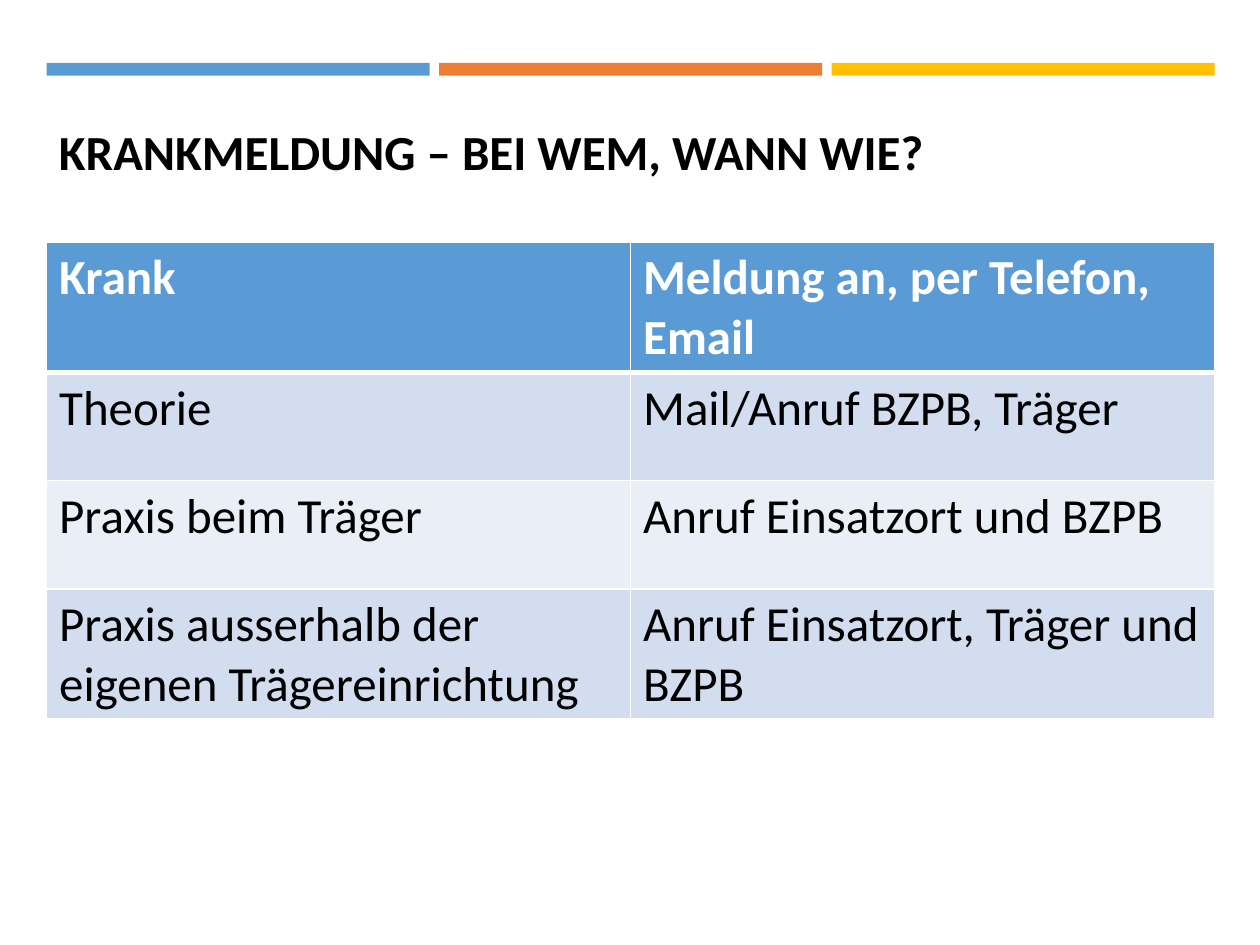
from lxml.etree import SubElement
from pptx import Presentation
from pptx.dml.color import RGBColor
from pptx.enum.shapes import MSO_SHAPE
from pptx.enum.text import MSO_ANCHOR
from pptx.oxml.ns import qn
from pptx.util import Inches, Pt

LEFT, WIDTH = 0.37, 9.27
BAR_WIDTH = 3.04
BAR_COLORS = ["5B9BD5", "ED7D31", "FFC000"]
HEADER_FILL = "5B9BD5"
BAND_FILLS = ["D2DEEF", "EAEFF7"]
ROW_HEIGHTS = [1.02, 0.86, 0.86, 0.86]
REPORTING_RULES = [
    ("Krank", "Meldung an, per Telefon, Email"),
    ("Theorie", "Mail/Anruf BZPB, Träger"),
    ("Praxis beim Träger", "Anruf Einsatzort und BZPB"),
    ("Praxis ausserhalb der eigenen Trägereinrichtung",
     "Anruf Einsatzort, Träger und BZPB"),
]


def paint(color_format, color):
    """Apply a hex colour to a fill or font colour."""
    color_format.rgb = RGBColor.from_string(color)


def write(text_frame, text, color, bold):
    """Add one styled run to the first paragraph."""
    run = text_frame.paragraphs[0].add_run()
    run.text = text
    run.font.name = "Calibri"
    run.font.size = Pt(28)
    run.font.bold = bold
    paint(run.font.color, color)


def add_bar(slide, left, color):
    """Draw one coloured bar of the header strip."""
    bar = slide.shapes.add_shape(
        MSO_SHAPE.RECTANGLE, Inches(left), Inches(0.5),
        Inches(BAR_WIDTH), Inches(0.1))
    bar.shadow.inherit = False
    bar.fill.solid()
    paint(bar.fill.fore_color, color)
    bar.line.fill.background()


def add_title(slide, text):
    """Place the slide heading."""
    heading = slide.shapes.add_textbox(
        Inches(LEFT), Inches(0.77), Inches(WIDTH), Inches(0.86))
    heading.text_frame.word_wrap = True
    heading.text_frame.vertical_anchor = MSO_ANCHOR.MIDDLE
    write(heading.text_frame, text, "000000", True)


def add_borders(cell, bottom_width):
    """Give a cell white borders with a chosen bottom width."""
    properties = cell._tc.get_or_add_tcPr()
    widths = {"a:lnL": 1, "a:lnR": 1, "a:lnT": 1, "a:lnB": bottom_width}
    for side, width in widths.items():
        border = SubElement(properties, qn(side), w=str(Pt(width)))
        fill = SubElement(border, qn("a:solidFill"))
        SubElement(fill, qn("a:srgbClr"), val="FFFFFF")


def fill_cell(cell, text, row):
    """Style and write a cell according to its row."""
    is_header = row == 0
    add_borders(cell, 3 if is_header else 1)
    cell.fill.solid()
    paint(cell.fill.fore_color,
          HEADER_FILL if is_header else BAND_FILLS[(row - 1) % 2])
    write(cell.text_frame, text, "FFFFFF" if is_header else "000000", is_header)


def add_rules_table(slide):
    """Build the table of reporting rules."""
    table = slide.shapes.add_table(
        len(REPORTING_RULES), 2, Inches(LEFT), Inches(1.92),
        Inches(WIDTH), Inches(sum(ROW_HEIGHTS))).table
    for row, (texts, height) in enumerate(zip(REPORTING_RULES, ROW_HEIGHTS)):
        table.rows[row].height = Inches(height)
        for column, text in enumerate(texts):
            fill_cell(table.cell(row, column), text, row)


def main():
    """Build and save the slide."""
    presentation = Presentation()
    presentation.slide_width = Inches(10)
    presentation.slide_height = Inches(7.5)
    slide = presentation.slides.add_slide(presentation.slide_layouts[6])
    bar_step = (WIDTH - BAR_WIDTH) / (len(BAR_COLORS) - 1)
    for index, color in enumerate(BAR_COLORS):
        add_bar(slide, LEFT + index * bar_step, color)
    add_title(slide, "KRANKMELDUNG – BEI WEM, WANN WIE?")
    add_rules_table(slide)
    presentation.save("out.pptx")


if __name__ == "__main__":
    main()
